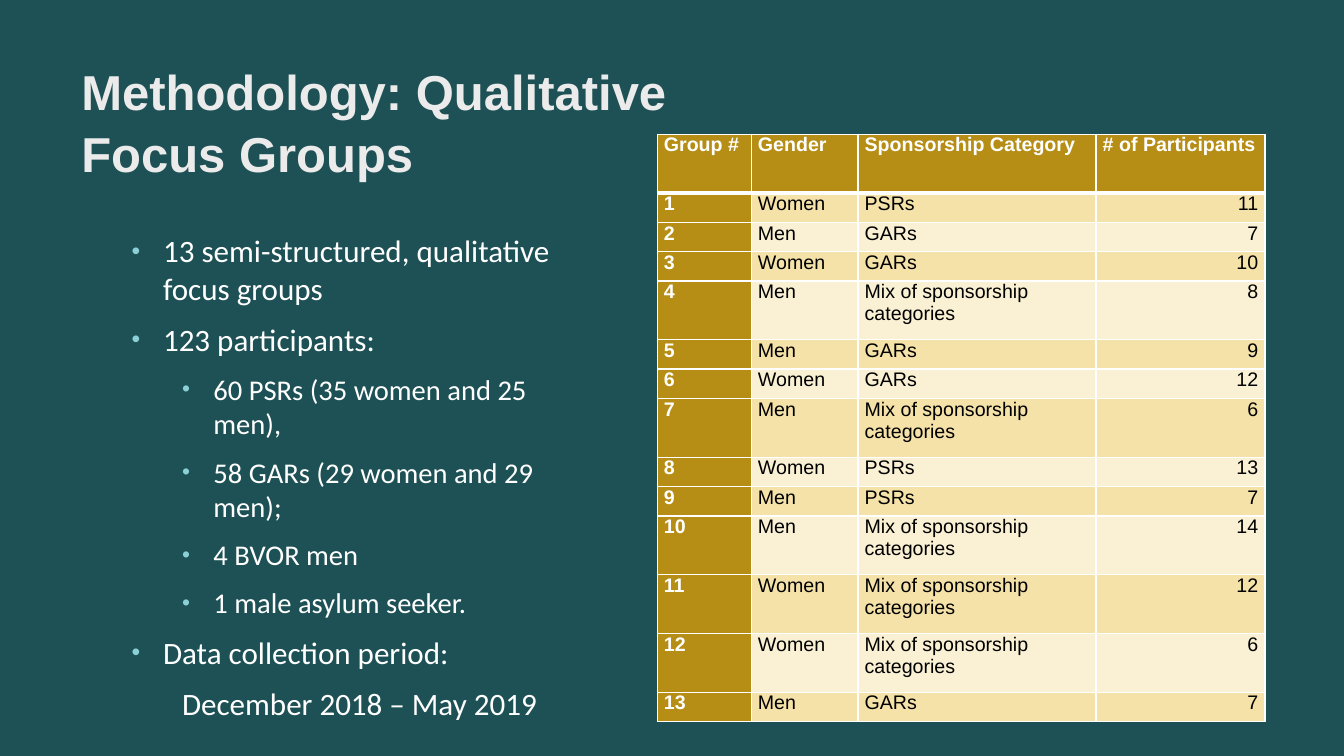
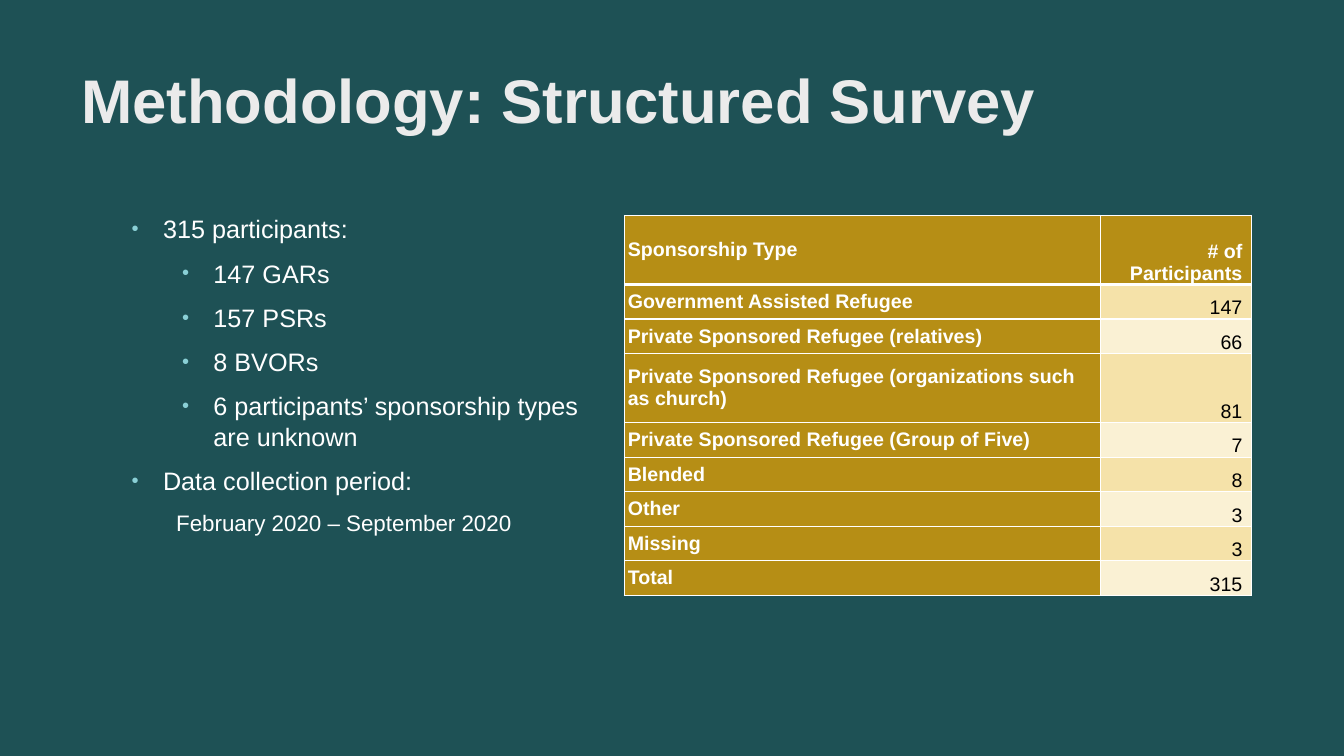
"""Build two methodology slides: focus groups and structured survey."""
from lxml.etree import SubElement
from pptx import Presentation
from pptx.dml.color import RGBColor
from pptx.enum.text import MSO_ANCHOR, PP_ALIGN
from pptx.oxml.ns import qn
from pptx.util import Cm, Pt

TEAL = RGBColor(0x1E, 0x51, 0x55)
TITLE_GREY = RGBColor(0xEB, 0xEB, 0xEB)
WHITE = RGBColor(0xFF, 0xFF, 0xFF)
BLACK = RGBColor(0x00, 0x00, 0x00)
AQUA = RGBColor(0x8A, 0xD0, 0xD6)
GOLD = RGBColor(0xB6, 0x8E, 0x15)
BANDS = (RGBColor(0xF5, 0xE2, 0xA9), RGBColor(0xFA, 0xF1, 0xD4))

MIX = "Mix of sponsorship categories"
POINT, SUBPOINT, PERIOD = range(3)
BULLET_HANG = 0.79
BULLET_INDENTS = {POINT: 0.79, SUBPOINT: 2.06}

FOCUS_GROUPS = {
    "title": "Methodology: Qualitative Focus Groups",
    "title_size": 35,
    "title_width": 15.32,
    "body_box": (3.07, 5.72, 12.22, 11.66),
    "body_font": "Calibri",
    "body_sizes": {POINT: 22.2, SUBPOINT: 20.4, PERIOD: 22.2},
    "period_indent": 1.27,
    "body": [
        (POINT, "13 semi-structured, qualitative focus groups"),
        (POINT, "123 participants:"),
        (SUBPOINT, "60 PSRs (35 women and 25 men),"),
        (SUBPOINT, "58 GARs (29 women and 29 men);"),
        (SUBPOINT, "4 BVOR men"),
        (SUBPOINT, "1 male asylum seeker."),
        (POINT, "Data collection period:"),
        (PERIOD, "December 2018 – May 2019"),
    ],
    "table_at": (16.56, 3.38),
    "row_height": 0.74,
    "columns": (2.37, 2.69, 6.0, 4.26),
    "tall_rows": {0, 4, 7, 10, 11, 12},
    "insets": (0.17, 0.17),
    "anchors": (MSO_ANCHOR.TOP,) * 4,
    "first_right_aligned_row": 1,
    "rows": [
        ("Group #", "Gender", "Sponsorship Category", "# of Participants"),
        (1, "Women", "PSRs", 11),
        (2, "Men", "GARs", 7),
        (3, "Women", "GARs", 10),
        (4, "Men", MIX, 8),
        (5, "Men", "GARs", 9),
        (6, "Women", "GARs", 12),
        (7, "Men", MIX, 6),
        (8, "Women", "PSRs", 13),
        (9, "Men", "PSRs", 7),
        (10, "Men", MIX, 14),
        (11, "Women", MIX, 12),
        (12, "Women", MIX, 6),
        (13, "Men", "GARs", 7),
    ],
}

SURVEY = {
    "title": "Methodology: Structured Survey",
    "title_size": 44,
    "title_width": 26.14,
    "body_box": (3.07, 5.26, 12.22, 12.12),
    "body_font": "Arial",
    "body_sizes": {POINT: 18, SUBPOINT: 18, PERIOD: 16},
    "period_indent": 1.12,
    "body": [
        (POINT, "315 participants:"),
        (SUBPOINT, "147 GARs"),
        (SUBPOINT, "157 PSRs"),
        (SUBPOINT, "8 BVORs"),
        (SUBPOINT, "6 participants’ sponsorship types are unknown"),
        (POINT, "Data collection period:"),
        (PERIOD, "February 2020 – September 2020"),
    ],
    "table_at": (15.74, 5.43),
    "row_height": 0.87,
    "columns": (12.0, 3.8),
    "tall_rows": {0, 3},
    "insets": (0.08, 0.23),
    "anchors": (MSO_ANCHOR.MIDDLE, MSO_ANCHOR.BOTTOM),
    "first_right_aligned_row": 0,
    "rows": [
        ("Sponsorship Type", "# of Participants"),
        ("Government Assisted Refugee", 147),
        ("Private Sponsored Refugee (relatives)", 66),
        ("Private Sponsored Refugee (organizations such as church)", 81),
        ("Private Sponsored Refugee (Group of Five)", 7),
        ("Blended", 8),
        ("Other", 3),
        ("Missing", 3),
        ("Total", 315),
    ],
}


def style(paragraph, font_name, size, color, bold=False):
    for run in paragraph.runs:
        run.font.name = font_name
        run.font.size = Pt(size)
        run.font.color.rgb = color
        run.font.bold = bold


def add_text_frame(slide, box):
    frame = slide.shapes.add_textbox(*map(Cm, box)).text_frame
    frame.word_wrap = True
    return frame


def add_title(slide, content):
    frame = add_text_frame(slide, (1.8, 1.35, content["title_width"], 3.8))
    frame.text = content["title"]
    heading = frame.paragraphs[0]
    heading.line_spacing = 1.05
    style(heading, "Arial", content["title_size"], TITLE_GREY, bold=True)


def add_bullet(properties):
    color = SubElement(properties, qn("a:buClr"))
    SubElement(color, qn("a:srgbClr"), val=str(AQUA))
    SubElement(properties, qn("a:buSzPct"), val="80000")
    SubElement(properties, qn("a:buFont"), typeface="Arial")
    SubElement(properties, qn("a:buChar"), char="•")


def add_body(slide, content):
    frame = add_text_frame(slide, content["body_box"])
    for index, (kind, text) in enumerate(content["body"]):
        paragraph = frame.add_paragraph() if index else frame.paragraphs[0]
        paragraph.text = text
        paragraph.space_before = Pt(10 if index else 0)
        properties = paragraph._p.get_or_add_pPr()
        indent = BULLET_INDENTS.get(kind, content["period_indent"])
        properties.set("marL", str(Cm(indent)))
        if kind in BULLET_INDENTS:
            properties.set("indent", str(-Cm(BULLET_HANG)))
            add_bullet(properties)
        style(paragraph, content["body_font"], content["body_sizes"][kind], WHITE)


def add_borders(cell, row):
    widths = {"L": 1, "R": 1, "T": 3 if row == 1 else 1, "B": 3 if row == 0 else 1}
    for side, width in widths.items():
        border = SubElement(cell._tc.get_or_add_tcPr(), qn(f"a:ln{side}"), w=str(Pt(width)))
        fill = SubElement(border, qn("a:solidFill"))
        SubElement(fill, qn("a:srgbClr"), val=str(WHITE))


def fill_cell(cell, value, row, column, content):
    add_borders(cell, row)
    is_heading = row == 0 or column == 0
    cell.fill.solid()
    cell.fill.fore_color.rgb = GOLD if is_heading else BANDS[(row - 1) % 2]
    cell.margin_left, cell.margin_right = map(Cm, content["insets"])
    cell.margin_top = cell.margin_bottom = 0
    cell.vertical_anchor = content["anchors"][column]
    cell.text_frame.text = str(value)
    paragraph = cell.text_frame.paragraphs[0]
    is_count = column == len(content["columns"]) - 1
    if is_count and row >= content["first_right_aligned_row"]:
        paragraph.alignment = PP_ALIGN.RIGHT
    style(paragraph, "Arial", 14, WHITE if is_heading else BLACK, bold=is_heading)


def add_participants(slide, content):
    rows, columns = content["rows"], content["columns"]
    heights = [content["row_height"] * (2 if row in content["tall_rows"] else 1)
               for row in range(len(rows))]
    box = (*content["table_at"], sum(columns), sum(heights))
    table = slide.shapes.add_table(len(rows), len(columns), *map(Cm, box)).table
    table.first_col = True
    table.horz_banding = False
    for column, width in enumerate(columns):
        table.columns[column].width = Cm(width)
    for row, values in enumerate(rows):
        table.rows[row].height = Cm(heights[row])
        for column, value in enumerate(values):
            fill_cell(table.cell(row, column), value, row, column, content)


def main():
    presentation = Presentation()
    presentation.slide_width = Cm(33.87)
    presentation.slide_height = Cm(19.05)
    for content in (FOCUS_GROUPS, SURVEY):
        slide = presentation.slides.add_slide(presentation.slide_layouts[6])
        slide.background.fill.solid()
        slide.background.fill.fore_color.rgb = TEAL
        add_title(slide, content)
        add_body(slide, content)
        add_participants(slide, content)
    presentation.save("out.pptx")


if __name__ == "__main__":
    main()
